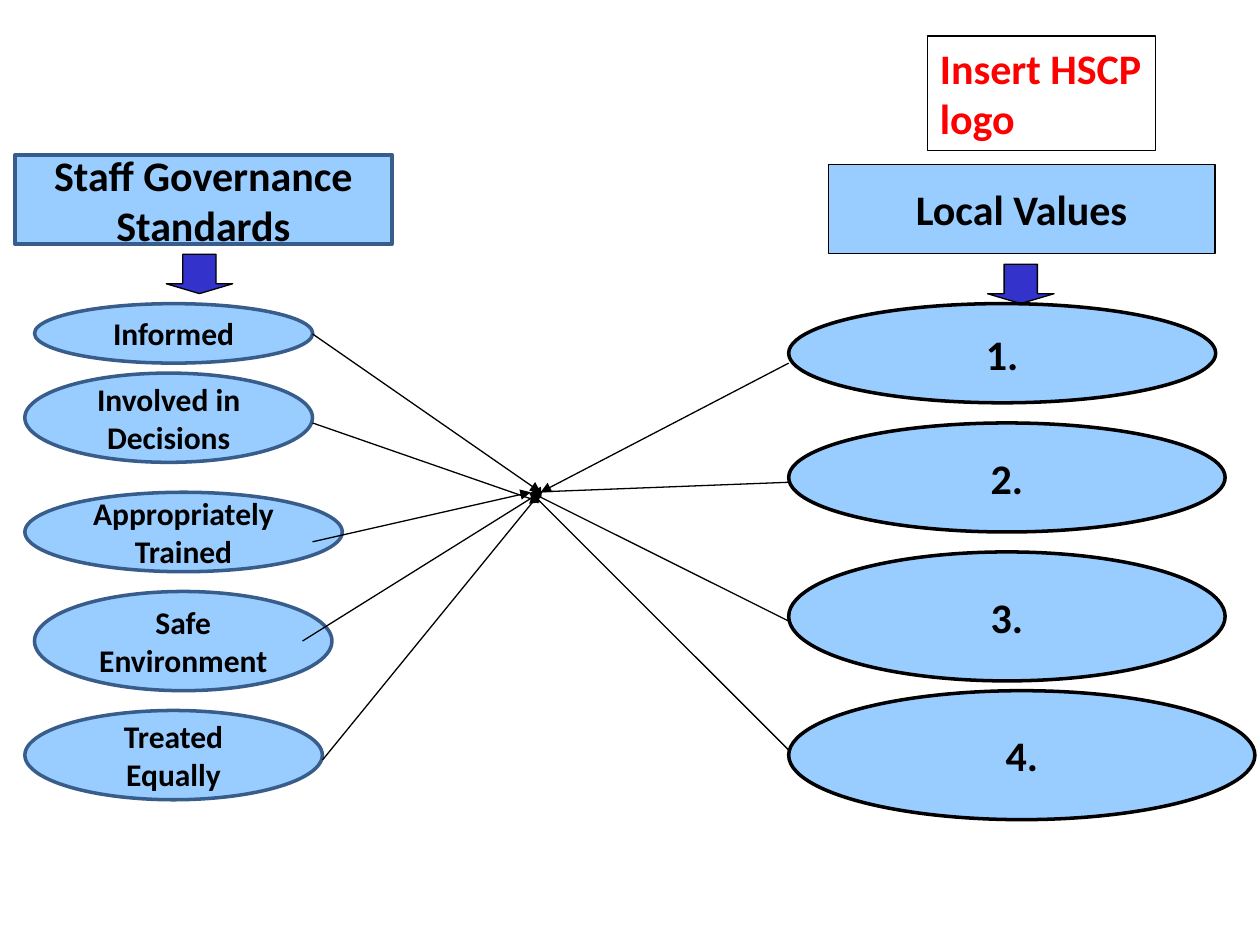
from lxml import etree
from pptx import Presentation
from pptx.dml.color import RGBColor
from pptx.enum.shapes import MSO_CONNECTOR, MSO_SHAPE
from pptx.enum.text import MSO_ANCHOR, PP_ALIGN
from pptx.oxml.ns import qn
from pptx.util import Pt

RECT = MSO_SHAPE.RECTANGLE
OVAL = MSO_SHAPE.OVAL
DOWN_ARROW = MSO_SHAPE.DOWN_ARROW
STRAIGHT = MSO_CONNECTOR.STRAIGHT
CENTER = PP_ALIGN.CENTER
LEFT = PP_ALIGN.LEFT
MIDDLE = MSO_ANCHOR.MIDDLE
TOP = MSO_ANCHOR.TOP


def rgb(value):
    """Turn a hex string into a colour."""
    return RGBColor.from_string(value)


class Diagram:
    """Holds the style and the current slide."""

    font = "Calibri"
    black = "000000"
    red = "FF0000"
    pale = "99CCFF"
    edge = "385D8A"
    blue = "3333CC"

    def __init__(self, slide):
        """Keep the slide to draw on."""
        self.s = slide

    def shape(self, kind, box, fill, line, width):
        """Add a preset shape without shadow."""
        sp = self.s.shapes.add_shape(kind, *map(Pt, box))
        sp.shadow.inherit = False
        if fill:
            sp.fill.solid()
            sp.fill.fore_color.rgb = rgb(fill)
        else:
            sp.fill.background()
        sp.line.color.rgb = rgb(line)
        sp.line.width = Pt(width)
        return sp

    def label(self, sp, text, size, color=black, align=CENTER, anchor=MIDDLE, wrap=True):
        """Write bold text in a shape."""
        tf = sp.text_frame
        tf.text = text
        tf.word_wrap = wrap
        tf.vertical_anchor = anchor
        p = tf.paragraphs[0]
        p.alignment = align
        r = p.runs[0]
        r.font.name = self.font
        r.font.size = Pt(size)
        r.font.bold = True
        r.font.color.rgb = rgb(color)

    def header(self, text, box, line, width, wrap=True):
        """Add a column header."""
        self.label(self.shape(RECT, box, self.pale, line, width), text, 24, wrap=wrap)

    def oval(self, text, box, line, size):
        """Add a labelled ellipse."""
        self.label(self.shape(OVAL, box, self.pale, line, 2), text, size)

    def down_arrow(self, left, top):
        """Add a block arrow below a header."""
        sp = self.shape(DOWN_ARROW, (left, top, 38, 22.5), self.blue, self.black, 0.75)
        sp.adjustments[0] = 0.5
        sp.adjustments[1] = 0.25

    def placeholder_box(self, text, box):
        """Add the outlined box for the logo."""
        sp = self.shape(RECT, box, None, self.black, 0.75)
        self.label(sp, text, 24, self.red, LEFT, TOP)

    def arrow(self, start, end):
        """Add a thin line with an arrowhead at its end."""
        cx = self.s.shapes.add_connector(STRAIGHT, *map(Pt, start + end))
        cx.line.color.rgb = rgb(self.black)
        cx.line.width = Pt(0.75)
        etree.SubElement(cx.line._get_or_add_ln(), qn("a:tailEnd"), type="triangle")
        etree.SubElement(cx._element.spPr, qn("a:effectLst"))


def main():
    """Build the slide and save it."""
    prs = Presentation()
    prs.slide_width, prs.slide_height = Pt(720), Pt(540)
    d = Diagram(prs.slides.add_slide(prs.slide_layouts[6]))

    d.header("Staff Governance Standards", (8.5, 88.5, 215.5, 51), d.edge, 2)
    d.down_arrow(95, 145.3)
    standards = [
        ("Informed", (19.7, 173.5, 159, 34)),
        ("Involved in Decisions", (14.2, 213.2, 164.4, 51)),
        ("Appropriately Trained", (14.2, 281.3, 181.4, 45.4)),
        ("Safe Environment", (19.7, 338, 170, 56.7)),
        ("Treated Equally", (14.2, 406, 170, 51)),
    ]
    for text, box in standards:
        d.oval(text, box, d.edge, 18)

    d.header("Local Values", (473.3, 94, 221, 51), d.black, 0.75, wrap=False)
    d.down_arrow(564.3, 151)
    values = [(173.5, 244, 56.7), (241.7, 249.4, 62.3), (315.4, 249.4, 73.7), (394.7, 266.4, 73.7)]
    for number, (top, width, height) in enumerate(values, 1):
        d.oval(f"{number}.", (450.7, top, width, height), d.black, 24)

    near, far, low = (303.3, 281.3), (309, 281.3), (309, 287)
    arrows = [
        ((178.6, 309.6), near),
        ((172.9, 366.3), far),
        ((184.3, 434.3), far),
        ((178.6, 190.8), far),
        ((450.7, 207.5), far),
        ((450.7, 275.6), near),
        ((450.7, 354.9), near),
        ((450.7, 428.6), near),
        ((178.6, 241.7), low),
    ]
    for start, end in arrows:
        d.arrow(start, end)

    d.placeholder_box("Insert HSCP logo", (530, 20.6, 130.3, 65.5))
    prs.save("out.pptx")


if __name__ == "__main__":
    main()
